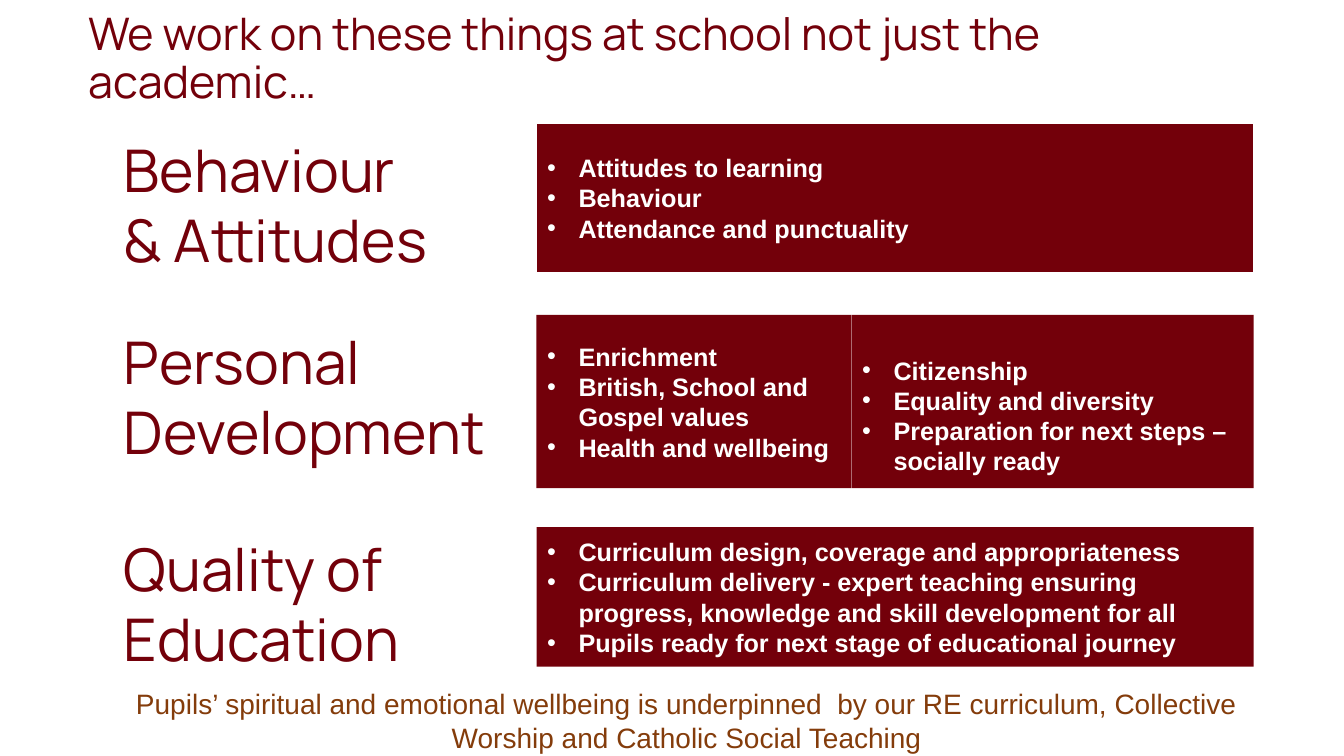
from lxml import etree
from pptx import Presentation
from pptx.dml.color import RGBColor
from pptx.enum.shapes import MSO_SHAPE
from pptx.enum.text import MSO_ANCHOR, MSO_AUTO_SIZE, PP_ALIGN
from pptx.oxml.ns import qn
from pptx.util import Emu, Pt

PX = 9525
RECTANGLE = MSO_SHAPE.RECTANGLE
TOP, MIDDLE = MSO_ANCHOR.TOP, MSO_ANCHOR.MIDDLE
NO_AUTOFIT = MSO_AUTO_SIZE.NONE
LEFT, CENTER = PP_ALIGN.LEFT, PP_ALIGN.CENTER
COLORS = {"maroon": "73000A", "white": "FFFFFF", "brown": "843C0B"}
HEADING_FONT, BODY_FONT = "Manrope", "Arial"
LABEL_LEFT, LABEL_WIDTH, LABEL_HEIGHT = 108, 375, 156
PANEL_LEFT, PANEL_WIDTH = 511, 683
SPLIT = 300
INDENT = 30

BEHAVIOUR = ["Attitudes to learning", "Behaviour", "Attendance and punctuality"]
WELLBEING = ["Enrichment", "British, School and Gospel values", "Health and wellbeing"]
CITIZENSHIP = [
    "Citizenship",
    "Equality and diversity",
    "Preparation for next steps – socially ready",
]
EDUCATION = [
    "Curriculum design, coverage and appropriateness",
    "Curriculum delivery - expert teaching ensuring progress, "
    "knowledge and skill development for all",
    "Pupils ready for next stage of educational journey",
]


def px(*lengths):
    """Turn pixel lengths into EMU."""
    return [Emu(length * PX) for length in lengths]


def color(name):
    """Look up a named colour."""
    return RGBColor.from_string(COLORS[name])


def write(frame, lines, font, size, ink, bold=False, align=LEFT,
          anchor=TOP, insets=(10, 5, 10, 5)):
    """Fill a text frame with one paragraph per line and format it."""
    frame.word_wrap = True
    frame.auto_size = NO_AUTOFIT
    frame.vertical_anchor = anchor
    (frame.margin_left, frame.margin_top,
     frame.margin_right, frame.margin_bottom) = px(*insets)
    frame.text = "\n".join(lines)
    for paragraph in frame.paragraphs:
        paragraph.alignment = align
        for run in paragraph.runs:
            run.font.name = font
            run.font.size = Pt(size)
            run.font.bold = bold
            run.font.color.rgb = color(ink)


def add_bullet(paragraph):
    """Give a paragraph a white bullet and a hanging indent."""
    properties = paragraph._p.get_or_add_pPr()
    properties.set("marL", str(INDENT * PX))
    properties.set("indent", str(-INDENT * PX))
    bullet_color = etree.SubElement(properties, qn("a:buClr"))
    etree.SubElement(bullet_color, qn("a:srgbClr"), val=COLORS["white"])
    etree.SubElement(properties, qn("a:buFont"), typeface=BODY_FONT)
    etree.SubElement(properties, qn("a:buChar"), char="•")


def add_title(slide, box, heading):
    """Place the slide title in its placeholder."""
    title = slide.shapes.title
    title.left, title.top, title.width, title.height = px(*box)
    write(title.text_frame, [heading], HEADING_FONT, 32, "maroon", anchor=MIDDLE)
    title.text_frame.paragraphs[0].line_spacing = 0.9


def add_label(slide, top, lines):
    """Place the large label of one area."""
    box = (LABEL_LEFT, top, LABEL_WIDTH, LABEL_HEIGHT)
    label = slide.shapes.add_textbox(*px(*box))
    write(label.text_frame, lines, HEADING_FONT, 42, "maroon", insets=(10, 10, 10, 10))


def add_panel(slide, box, points, outlined=False, anchor=MIDDLE, inset_top=5):
    """Place a maroon panel with bulleted points."""
    panel = slide.shapes.add_shape(RECTANGLE, *px(*box))
    panel.shadow.inherit = False
    panel.fill.solid()
    panel.fill.fore_color.rgb = color("maroon")
    if outlined:
        panel.line.color.rgb = color("white")
        panel.line.width = Pt(1)
    else:
        panel.line.fill.background()
    write(panel.text_frame, points, BODY_FONT, 18, "white", bold=True,
          anchor=anchor, insets=(10, inset_top, 10, 5))
    for paragraph in panel.text_frame.paragraphs:
        add_bullet(paragraph)


def add_footer(slide, box, statement):
    """Place the closing statement."""
    footer = slide.shapes.add_textbox(*px(*box))
    write(footer.text_frame, [statement], BODY_FONT, 20, "brown", align=CENTER)


def main():
    """Build and save the slide."""
    deck = Presentation()
    deck.slide_width, deck.slide_height = px(1280, 720)
    slide = deck.slides.add_slide(deck.slide_layouts[5])
    add_title(slide, (74, 38, 1107, 38),
              "We work on these things at school not just the academic…")

    add_label(slide, 117, ["Behaviour", "& Attitudes"])
    add_panel(slide, (PANEL_LEFT, 117, PANEL_WIDTH, 143), BEHAVIOUR, outlined=True)

    add_label(slide, 300, ["Personal", "Development"])
    add_panel(slide, (PANEL_LEFT, 300, SPLIT, 165), WELLBEING)
    add_panel(slide, (PANEL_LEFT + SPLIT, 300, PANEL_WIDTH - SPLIT, 165),
              CITIZENSHIP, anchor=TOP, inset_top=38)

    add_label(slide, 497, ["Quality of", "Education"])
    add_panel(slide, (PANEL_LEFT, 502, PANEL_WIDTH, 133), EDUCATION)

    add_footer(slide, (115, 649, 1078, 71),
               "Pupils’ spiritual and emotional wellbeing is underpinned  by our "
               "RE curriculum, Collective Worship and Catholic Social Teaching")
    deck.save("out.pptx")


if __name__ == "__main__":
    main()
